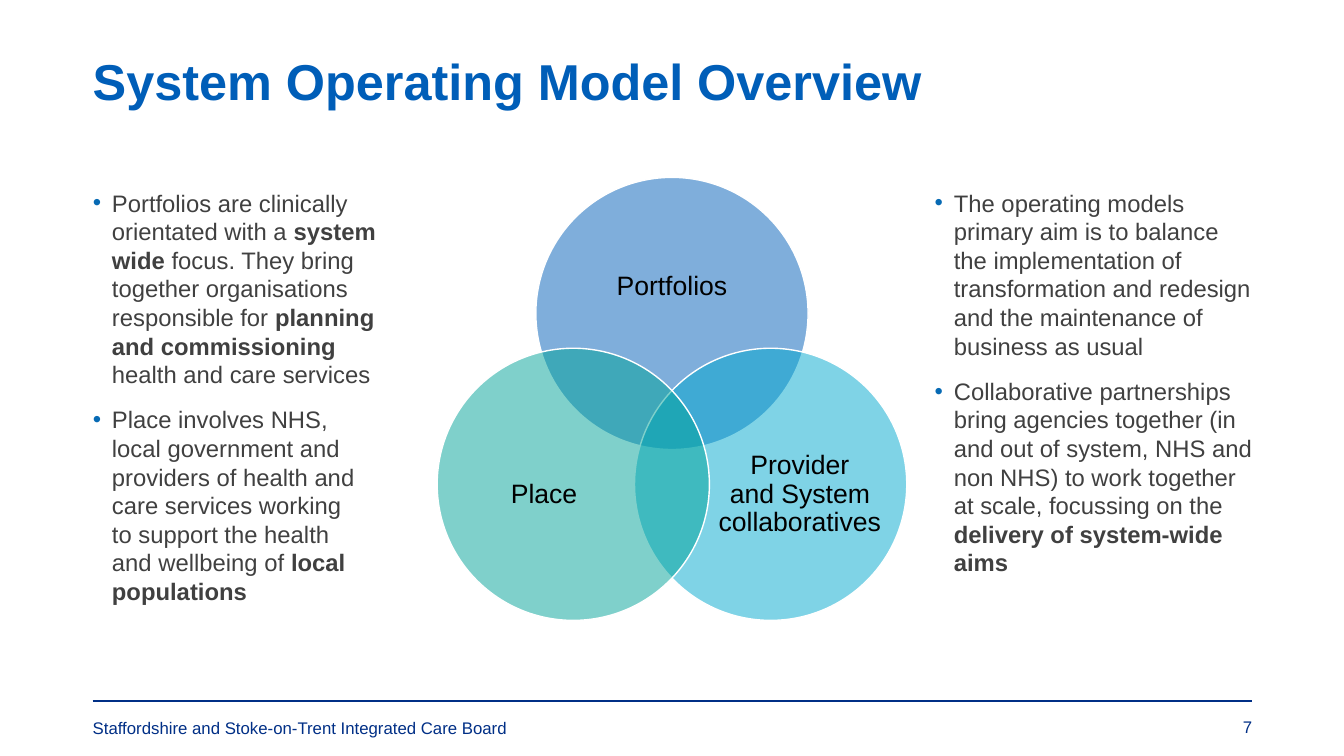
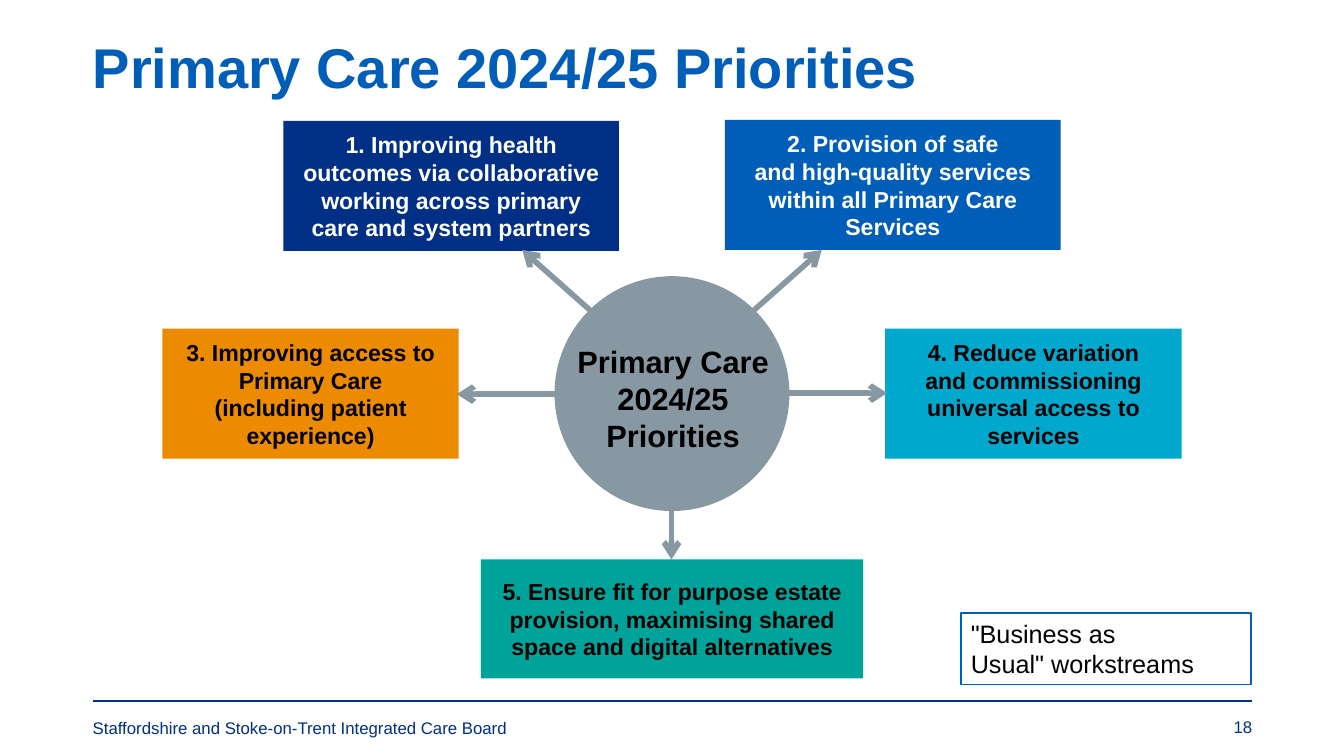
import math
from lxml import etree
from pptx import Presentation
from pptx import util as u
from pptx.dml.color import RGBColor
from pptx.enum import shapes, text
from pptx.oxml.ns import qn

# Shared style
WIDTH, HEIGHT = 13.33, 7.5
LEFT, RIGHT = 0.92, 12.42
COLOURS = dict(navy="002F86", blue="005EB8", aqua="00A8CE", teal="00A399",
               orange="EC8A00", grey="8898A3", bullet="076AB4",
               body="404040", black="000000", white="FFFFFF")
FONT = "Arial"
FOOTER = "Staffordshire and Stoke-on-Trent Integrated Care Board"
CENTRE, RIGHT_ALIGN = text.PP_ALIGN.CENTER, text.PP_ALIGN.RIGHT
TOP, MIDDLE = text.MSO_ANCHOR.TOP, text.MSO_ANCHOR.MIDDLE
SHAPE = shapes.MSO_SHAPE

# Content: a paragraph is a list of (words, bold) runs
MODEL_TITLE = "System Operating Model Overview"
PORTFOLIO_POINTS = [
    [("Portfolios are clinically orientated with a ", False),
     ("system wide", True),
     (" focus. They bring together organisations responsible for ", False),
     ("planning and commissioning", True),
     (" health and care services", False)],
    [("Place involves NHS,\nlocal government and providers of health and\n"
      "care services working\nto support the health\nand wellbeing of ", False),
     ("local populations", True)],
]
PARTNERSHIP_POINTS = [
    [("The operating models primary aim is to balance the implementation of "
      "transformation and redesign and the maintenance of business as usual", False)],
    [("Collaborative partnerships bring agencies together (in and out of system, "
      "NHS and non NHS) to work together at scale, focussing on the ", False),
     ("delivery of system-wide aims", True)],
]
# Venn circle: label, colour, angle, label offset from circle centre
VENN = [
    ("Portfolios", "blue", -90, (0, -0.26)),
    ("Provider\nand System collaboratives", "aqua", 30, (0.29, 0.1)),
    ("Place", "teal", 150, (-0.29, 0.1)),
]

PRIORITIES_TITLE = "Primary Care 2024/25 Priorities"
# Priority: words, fill, font colour, box, arrow from and to
PRIORITIES = [
    ("1. Improving health outcomes via collaborative working across primary care "
     "and system partners", "navy", "white", (2.81, 1.2, 3.33, 1.29),
     (5.99, 3.2, 5.18, 2.48)),
    ("2. Provision of safe\nand high-quality services within all Primary Care Services",
     "blue", "white", (7.19, 1.19, 3.33, 1.29), (7.34, 3.2, 8.15, 2.48)),
    ("3. Improving access to Primary Care\n(including patient experience)",
     "orange", "black", (1.61, 3.26, 2.94, 1.29), (5.83, 3.91, 4.53, 3.91)),
    ("4. Reduce variation\nand commissioning universal access to services",
     "aqua", "black", (8.78, 3.26, 2.94, 1.29), (7.5, 3.9, 8.8, 3.9)),
    ("5. Ensure fit for purpose estate provision, maximising shared space and "
     "digital alternatives", "teal", "black", (4.77, 5.55, 3.79, 1.18),
     (6.66, 4.26, 6.66, 5.55)),
]
WORKSTREAMS = '"Business as\nUsual" workstreams'


def rgb(colour):
    return RGBColor.from_string(COLOURS[colour])


def inches(values):
    return [u.Inches(v) for v in values]


def write(shape, paragraphs, size, colour, align=None, anchor=TOP,
          insets=(0.1, 0.05, 0.1, 0.05), spacing=None, bullets=False):
    """Fill a shape with paragraphs of (words, bold) runs."""
    frame = shape.text_frame
    frame.word_wrap = True
    frame.vertical_anchor = anchor
    (frame.margin_left, frame.margin_top,
     frame.margin_right, frame.margin_bottom) = inches(insets)
    for number, runs in enumerate(paragraphs):
        para = frame.add_paragraph() if number else frame.paragraphs[0]
        para.alignment = align or text.PP_ALIGN.LEFT
        if spacing:
            para.line_spacing = spacing
        if bullets:
            add_bullet(para)
            para.space_after = u.Pt(12)
        for words, bold in runs:
            for part, line in enumerate(words.split("\n")):
                if part:
                    para.add_line_break()
                run = para.add_run()
                run.text = line
                run.font.name, run.font.size = FONT, u.Pt(size)
                run.font.bold = bold
                run.font.color.rgb = rgb(colour)


def add_bullet(para):
    props = para._p.get_or_add_pPr()
    props.set("marL", str(u.Inches(0.19)))
    props.set("indent", str(-u.Inches(0.19)))
    bullet_colour = etree.SubElement(props, qn("a:buClr"))
    etree.SubElement(bullet_colour, qn("a:srgbClr"), val=COLOURS["bullet"])
    etree.SubElement(props, qn("a:buFont"), typeface=FONT)
    etree.SubElement(props, qn("a:buChar"), char="•")


def add_words(slide, box, paragraphs, size, colour, **style):
    write(slide.shapes.add_textbox(*inches(box)), paragraphs, size, colour, **style)


def add_block(slide, kind, box, fill, line=None, alpha=None):
    block = slide.shapes.add_shape(kind, *inches(box))
    block.shadow.inherit = False
    block.fill.solid()
    block.fill.fore_color.rgb = rgb(fill)
    if alpha:
        tint = block._element.spPr.find(qn("a:solidFill"))[0]
        etree.SubElement(tint, qn("a:alpha"), val=str(alpha * 1000))
    if line:
        block.line.color.rgb = rgb(line)
        block.line.width = u.Pt(1)
    else:
        block.line.fill.background()
    return block


def add_line(slide, ends, colour, width, arrow=False):
    line = slide.shapes.add_connector(shapes.MSO_CONNECTOR.STRAIGHT, *inches(ends))
    line.line.color.rgb = rgb(colour)
    line.line.width = u.Pt(width)
    if arrow:
        etree.SubElement(line.line._get_or_add_ln(), qn("a:tailEnd"), type="arrow")
    etree.SubElement(line._element.spPr, qn("a:effectLst"))


def add_page(deck, title, title_top, title_size, number):
    """Blank slide with the shared title, rule and footer."""
    slide = deck.slides.add_slide(deck.slide_layouts[6])
    add_line(slide, (LEFT, 6.95, RIGHT, 6.95), "navy", 1.5)
    add_words(slide, (LEFT, title_top, RIGHT - LEFT, 0.7), [[(title, True)]],
              title_size, "blue", insets=(0, 0, 0, 0), spacing=0.9)
    add_words(slide, (LEFT, 7.07, 8, 0.3), [[(FOOTER, False)]], 12, "navy",
              insets=(0, 0.05, 0.1, 0.05))
    add_words(slide, (RIGHT - 2, 7.06, 2, 0.3), [[(number, False)]], 12, "navy",
              align=RIGHT_ALIGN, insets=(0, 0.05, 0, 0.05))
    return slide


def build_model(deck):
    slide = add_page(deck, MODEL_TITLE, 0.57, 36, "7")
    # Columns of points
    column = 3.15
    for left, points, inset in ((LEFT, PORTFOLIO_POINTS, 0.1),
                                (RIGHT - column, PARTNERSHIP_POINTS, 0)):
        add_words(slide, (left, 1.82, column, 4.27), points, 17, "body",
                  insets=(0, 0.05, inset, 0.05), bullets=True)
    # Venn diagram, circles spaced evenly round one centre
    size, reach, centre_x, centre_y = 2.7, 1.13, WIDTH / 2, 4.24
    label_w, label_h = 1.7, 1.4
    for label, fill, angle, (shift_x, shift_y) in VENN:
        x = centre_x + reach * math.cos(math.radians(angle))
        y = centre_y + reach * math.sin(math.radians(angle))
        add_block(slide, SHAPE.OVAL, (x - size / 2, y - size / 2, size, size),
                  fill, line="white", alpha=50)
        add_words(slide, (x + shift_x - label_w / 2, y + shift_y - label_h / 2,
                          label_w, label_h), [[(label, False)]], 19, "black",
                  align=CENTRE, anchor=MIDDLE, insets=(0, 0, 0, 0), spacing=0.9)


def build_priorities(deck):
    slide = add_page(deck, PRIORITIES_TITLE, 0.4, 40, "18")
    # Priority boxes and their arrows
    for words, fill, colour, box, arrow in PRIORITIES:
        priority = add_block(slide, SHAPE.RECTANGLE, box, fill)
        write(priority, [[(words, True)]], 16.5, colour, align=CENTRE,
              anchor=MIDDLE, insets=(0.18, 0.1, 0.18, 0.1))
        add_line(slide, arrow, "grey", 4, arrow=True)
    # Hub
    hub = 2.33
    add_block(slide, SHAPE.OVAL, ((WIDTH - hub) / 2, 2.74, hub, hub), "grey")
    add_words(slide, (5.52, 3.35, 2.31, 1.21), [[(PRIORITIES_TITLE, True)]],
              22, "black", align=CENTRE)
    # Workstreams note
    note = add_block(slide, SHAPE.RECTANGLE, (9.53, 6.08, 2.88, 0.71),
                     "white", line="blue")
    write(note, [[(WORKSTREAMS, False)]], 18, "black")


def main():
    deck = Presentation()
    deck.slide_width, deck.slide_height = inches((WIDTH, HEIGHT))
    build_model(deck)
    build_priorities(deck)
    deck.save("out.pptx")


if __name__ == "__main__":
    main()
